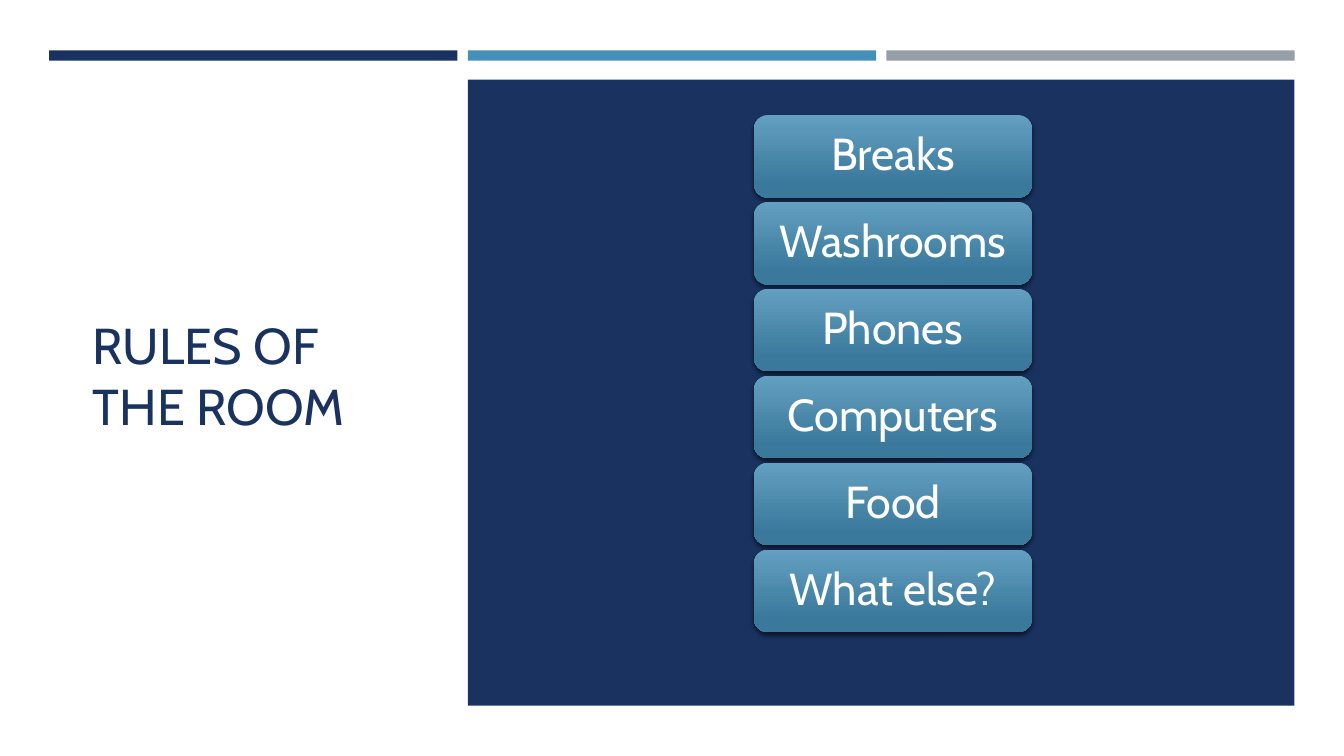
from dataclasses import dataclass

from lxml import etree
from pptx import Presentation
from pptx.dml.color import RGBColor
from pptx.enum.shapes import MSO_SHAPE
from pptx.enum.text import MSO_ANCHOR, MSO_AUTO_SIZE, PP_ALIGN
from pptx.oxml.ns import qn
from pptx.shapes.autoshape import Shape
from pptx.slide import Slide
from pptx.text.text import TextFrame
from pptx.util import Cm, Pt

RECTANGLE = MSO_SHAPE.RECTANGLE
ROUNDED = MSO_SHAPE.ROUNDED_RECTANGLE
MIDDLE = MSO_ANCHOR.MIDDLE
NO_AUTOFIT = MSO_AUTO_SIZE.NONE
LEFT, CENTER = PP_ALIGN.LEFT, PP_ALIGN.CENTER

FONT = "Cabin"
COLORS = {
    "white": "FFFFFF",
    "navy": "1A3260",
    "blue": "4590B8",
    "gray": "969FA7",
    "button_top": "639FC1",
    "button_bottom": "3A799B",
    "shadow": "000000",
}
RULES = ["Breaks", "Washrooms", "Phones", "Computers", "Food", "What else?"]
BAR_COLORS = ["navy", "blue", "gray"]


@dataclass(frozen=True)
class Area:
    left: float
    top: float
    width: float
    height: float

    def shifted(self, right: float = 0, down: float = 0) -> "Area":
        return Area(self.left + right, self.top + down, self.width, self.height)


PANEL = Area(11.79, 2.01, 20.83, 15.77)
TITLE = Area(2.08, 2.9, 8.48, 13.08)
FIRST_BAR = Area(1.24, 1.27, 10.29, 0.26)
BAR_STEP = 10.55
FIRST_BUTTON = Area(19, 2.9, 7.01, 2.08)
BUTTON_STEP = 2.19


def color(name: str) -> RGBColor:
    return RGBColor.from_string(COLORS[name])


def add_box(slide: Slide, kind: MSO_SHAPE, area: Area) -> Shape:
    box = slide.shapes.add_shape(
        kind, Cm(area.left), Cm(area.top), Cm(area.width), Cm(area.height)
    )
    box.shadow.inherit = False
    box.line.fill.background()
    return box


def add_block(slide: Slide, area: Area, fill: str) -> None:
    block = add_box(slide, RECTANGLE, area)
    block.fill.solid()
    block.fill.fore_color.rgb = color(fill)


def write(frame: TextFrame, text: str, size: int, fill: str, align: PP_ALIGN) -> None:
    frame.text = text
    frame.word_wrap = True
    frame.auto_size = NO_AUTOFIT
    frame.vertical_anchor = MIDDLE
    paragraph = frame.paragraphs[0]
    paragraph.alignment = align
    paragraph.font.name = FONT
    paragraph.font.size = Pt(size)
    paragraph.font.color.rgb = color(fill)


def add_drop_shadow(box: Shape) -> None:
    effects = box.element.spPr.find(qn("a:effectLst"))
    shadow = etree.SubElement(
        effects,
        qn("a:outerShdw"),
        blurRad=str(Pt(3)),
        dist=str(Pt(2)),
        dir="5400000",
        algn="ctr",
        rotWithShape="0",
    )
    shade = etree.SubElement(shadow, qn("a:srgbClr"), val=COLORS["shadow"])
    etree.SubElement(shade, qn("a:alpha"), val="55000")


def add_button(slide: Slide, area: Area, text: str) -> None:
    button = add_box(slide, ROUNDED, area)
    button.fill.gradient()
    button.fill.gradient_angle = 270
    looks = [("button_top", 0), ("button_bottom", 0.84)]
    for stop, (name, position) in zip(button.fill.gradient_stops, looks):
        stop.color.rgb = color(name)
        stop.position = position
    add_drop_shadow(button)
    frame = button.text_frame
    write(frame, text, 32, "white", CENTER)
    frame.paragraphs[0].line_spacing = 0.9


def add_title(slide: Slide, text: str) -> None:
    title = slide.shapes.title
    title.left, title.top = Cm(TITLE.left), Cm(TITLE.top)
    title.width, title.height = Cm(TITLE.width), Cm(TITLE.height)
    write(title.text_frame, text, 36, "navy", LEFT)


def main() -> None:
    deck = Presentation()
    deck.slide_width, deck.slide_height = Cm(33.87), Cm(19.05)
    page = deck.slides.add_slide(deck.slide_layouts[5])
    page.background.fill.solid()
    page.background.fill.fore_color.rgb = color("white")

    add_title(page, "RULES OF THE ROOM")
    add_block(page, PANEL, "navy")
    for index, fill in enumerate(BAR_COLORS):
        add_block(page, FIRST_BAR.shifted(right=index * BAR_STEP), fill)
    for index, rule in enumerate(RULES):
        add_button(page, FIRST_BUTTON.shifted(down=index * BUTTON_STEP), rule)

    deck.save("out.pptx")


if __name__ == "__main__":
    main()
